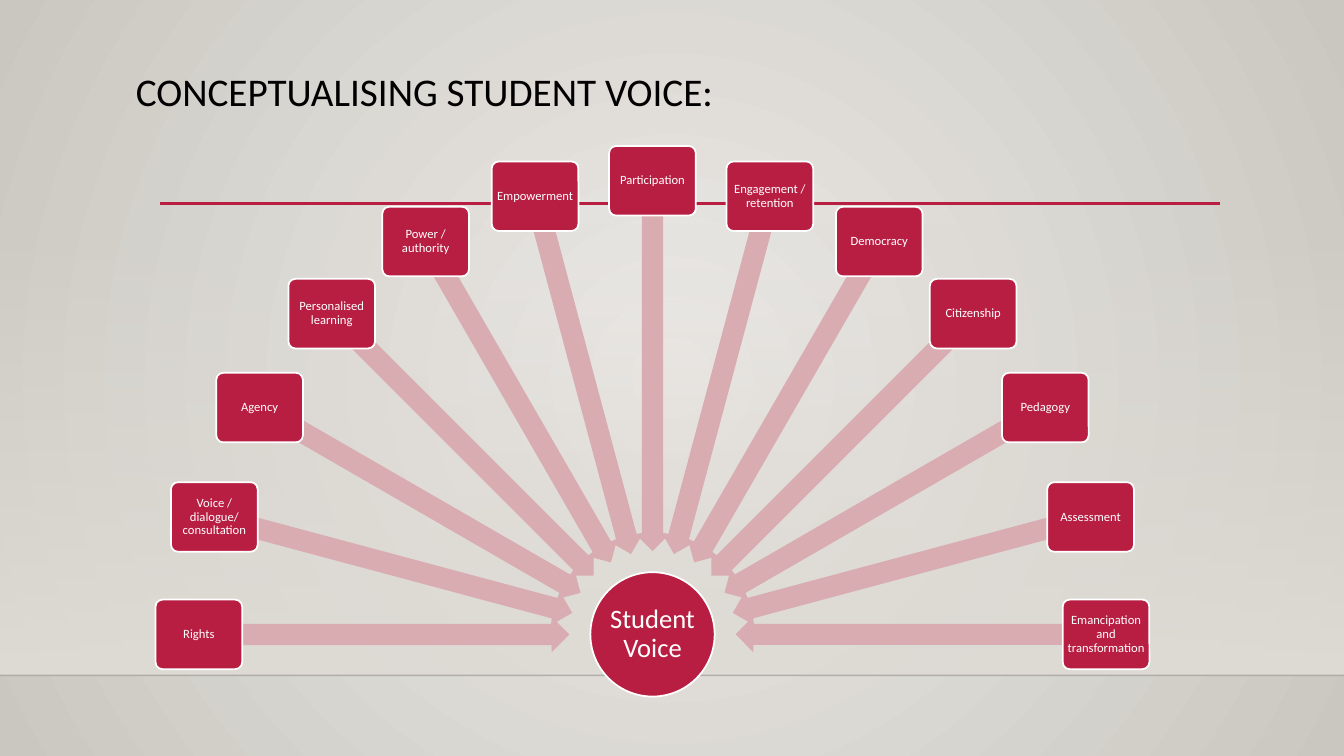
from math import cos, radians, sin

from pptx import Presentation
from pptx.dml.color import RGBColor
from pptx.enum.shapes import MSO_CONNECTOR, MSO_SHAPE
from pptx.enum.text import MSO_ANCHOR, PP_ALIGN
from pptx.oxml import parse_xml
from pptx.oxml.ns import nsdecls, qn
from pptx.oxml.xmlchemy import OxmlElement
from pptx.util import Inches, Pt

COLUMNS, ROWS = 40, 22.5
CELL = Inches(7.5) / ROWS

CRIMSON = RGBColor(0xB7, 0x1E, 0x42)
PINK = RGBColor(0xD8, 0xAC, 0xB0)
WHITE = RGBColor(0xFF, 0xFF, 0xFF)
BLACK = RGBColor(0x00, 0x00, 0x00)
FLOOR_EDGE = RGBColor(0x00, 0x00, 0x01)
WALL = RGBColor(0xDF, 0xDB, 0xD5)
GLOW = RGBColor(0xEC, 0xEA, 0xE7)
CORNER = RGBColor(0xCA, 0xC7, 0xC1)

HUB_X, HUB_Y = 19.42, 18.88
HUB_SIZE = 3.7
CARD_RADIUS, CARD_WIDTH, CARD_HEIGHT = 13.5, 2.58, 2.07
ARROW_RADIUS, ARROW_LENGTH, ARROW_THICKNESS = 7.98, 11.01, 1.05

THEMES = [
    "Rights", "Voice / dialogue/ consultation", "Agency",
    "Personalised learning", "Power / authority", "Empowerment",
    "Participation", "Engagement / retention", "Democracy", "Citizenship",
    "Pedagogy", "Assessment", "Emancipation and transformation",
]

TITLE_FONT = {"name": "Calibri", "size": Pt(28)}
HUB_FONT = {"name": "Calibri", "size": Pt(19)}
CARD_FONT = {"name": "Calibri", "size": Pt(9)}


def cells(*counts):
    return [round(count * CELL) for count in counts]


def apply_format(target, values):
    for attribute, value in values.items():
        setattr(target, attribute, value)


def set_alpha(element, percent):
    alpha = OxmlElement("a:alpha")
    alpha.set("val", str(percent * 1000))
    element.find(".//" + qn("a:srgbClr")).append(alpha)


def set_gradient(fill, first, last):
    fill.gradient()
    for stop, color in zip(fill.gradient_stops, (first, last)):
        stop.color.rgb = color


def paint_background(slide):
    set_gradient(slide.background.fill, GLOW, CORNER)
    linear = slide._element.find(".//" + qn("a:lin"))
    linear.getparent().replace(linear, parse_xml(
        f'<a:path {nsdecls("a")} path="circle"><a:fillToRect '
        'l="50000" t="50000" r="50000" b="50000"/></a:path>'))


def add_wall(slide, top, height):
    wall = slide.shapes.add_shape(
        MSO_SHAPE.RECTANGLE, *cells(0, top, COLUMNS, height))
    wall.shadow.inherit = False
    wall.line.fill.background()
    set_gradient(wall.fill, WALL, WALL)
    wall.fill.gradient_angle = 270
    set_alpha(wall._element, 0)


def add_rule(slide, left, right, row, color, weight):
    rule = slide.shapes.add_connector(
        MSO_CONNECTOR.STRAIGHT, *cells(left, row, right, row))
    rule.line.color.rgb = color
    rule.line.width = Pt(weight)
    rule._element.spPr.append(OxmlElement("a:effectLst"))
    return rule


def write(frame, wording, font, color, align, anchor, margins):
    sides = ("margin_left", "margin_top", "margin_right", "margin_bottom")
    apply_format(frame, {"word_wrap": True, "vertical_anchor": anchor,
                         **dict(zip(sides, map(Inches, margins)))})
    paragraph = frame.paragraphs[0]
    paragraph.text = wording
    apply_format(paragraph, {"alignment": align, "line_spacing": 0.9})
    apply_format(paragraph.font, font)
    paragraph.font.color.rgb = color


def add_title(slide, wording):
    title = slide.shapes.add_textbox(*cells(3.75, 2, 32.5, 1.35))
    write(title.text_frame, wording, TITLE_FONT, BLACK, PP_ALIGN.LEFT,
          MSO_ANCHOR.TOP, (0.1, 0.05, 0.1, 0.05))


def add_centred(slide, kind, x, y, width, height, color):
    piece = slide.shapes.add_shape(
        kind, *cells(x - width / 2, y - height / 2, width, height))
    piece.shadow.inherit = False
    piece.fill.solid()
    piece.fill.fore_color.rgb = color
    piece.line.fill.background()
    return piece


def add_node(slide, kind, x, y, width, height, wording, font, margin):
    node = add_centred(slide, kind, x, y, width, height, CRIMSON)
    node.line.color.rgb = WHITE
    node.line.width = Pt(1.25)
    write(node.text_frame, wording, font, WHITE, PP_ALIGN.CENTER,
          MSO_ANCHOR.MIDDLE, (margin,) * 4)
    return node


def on_ring(radius, angle):
    return (HUB_X + radius * cos(radians(angle)),
            HUB_Y + radius * sin(radians(angle)))


def add_theme(slide, wording, angle):
    arrow = add_centred(slide, MSO_SHAPE.LEFT_ARROW,
                        *on_ring(ARROW_RADIUS, angle),
                        ARROW_LENGTH, ARROW_THICKNESS, PINK)
    arrow.adjustments[0] = 0.6
    arrow.adjustments[1] = 0.5
    arrow.rotation = angle
    card = add_node(slide, MSO_SHAPE.ROUNDED_RECTANGLE,
                    *on_ring(CARD_RADIUS, angle),
                    CARD_WIDTH, CARD_HEIGHT, wording, CARD_FONT, 0.02)
    card.adjustments[0] = 0.1


def main():
    deck = Presentation()
    apply_format(deck, dict(zip(("slide_width", "slide_height"),
                                cells(COLUMNS, ROWS))))
    slide = deck.slides.add_slide(deck.slide_layouts[6])
    paint_background(slide)
    add_wall(slide, 6.63, 13.47)
    floor_edge = add_rule(slide, 0, COLUMNS, 20.1, FLOOR_EDGE, 1)
    set_alpha(floor_edge._element, 20)
    add_rule(slide, 4.77, 36.3, 6.06, CRIMSON, 2.5)
    add_title(slide, "CONCEPTUALISING STUDENT VOICE:")
    add_node(slide, MSO_SHAPE.OVAL, HUB_X, HUB_Y, HUB_SIZE, HUB_SIZE,
             "Student Voice", HUB_FONT, 0.01)
    step = 180 / (len(THEMES) - 1)
    for index, theme in enumerate(THEMES):
        add_theme(slide, theme, 180 + index * step)
    deck.save("out.pptx")


if __name__ == "__main__":
    main()
